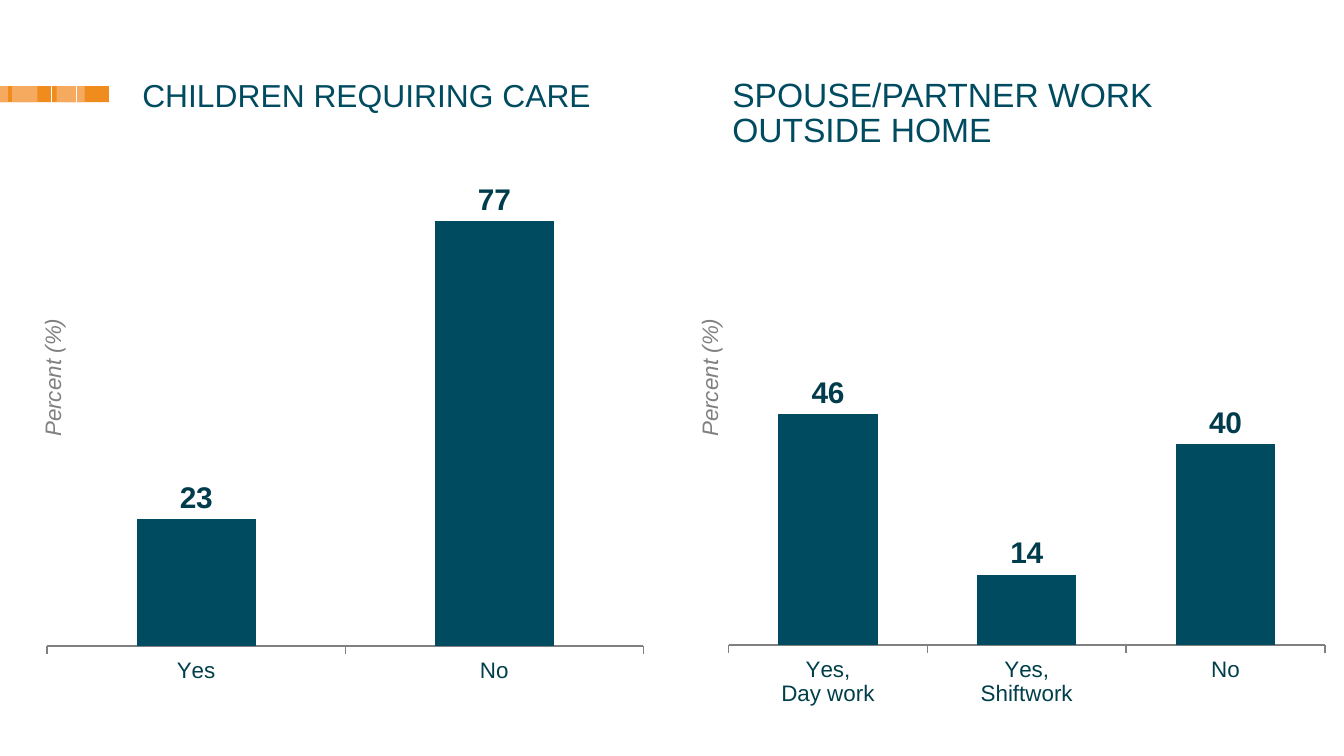
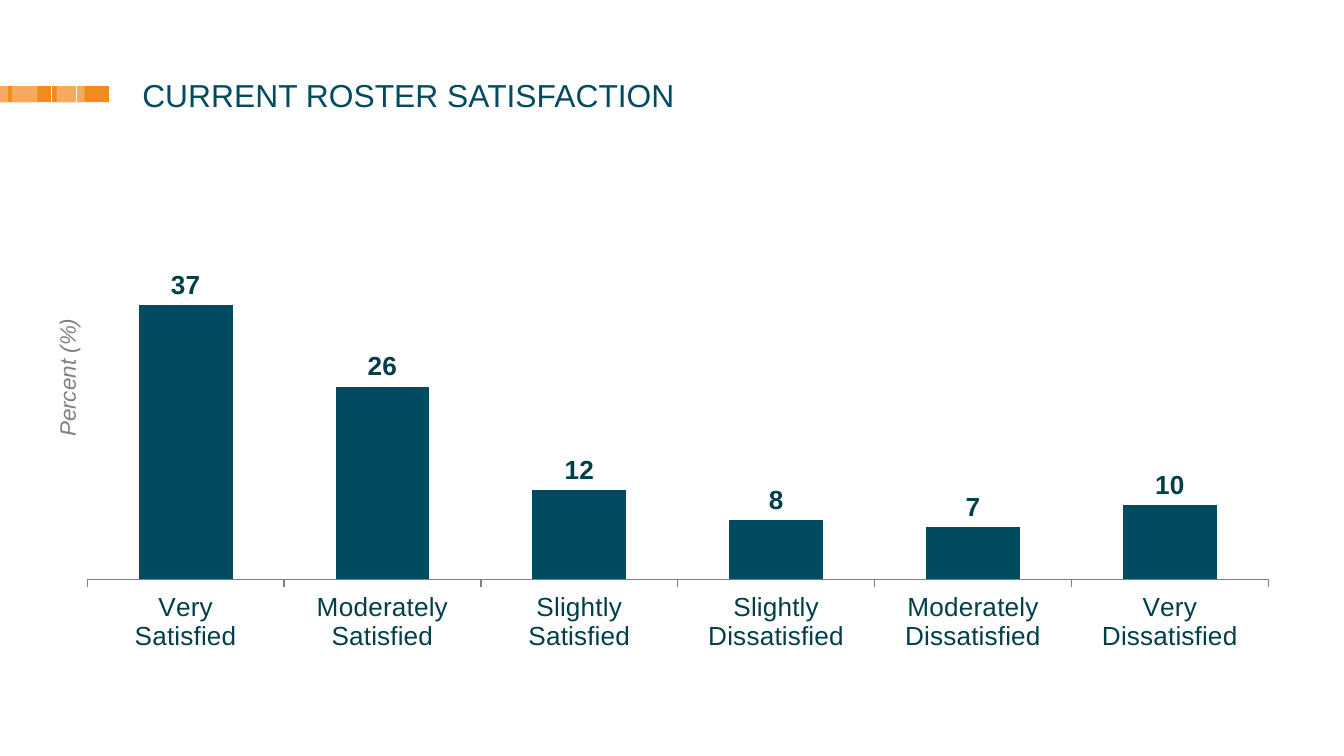
from dataclasses import dataclass

from lxml.etree import SubElement
from pptx import Presentation
from pptx.chart.data import CategoryChartData
from pptx.dml.color import RGBColor
from pptx.enum.chart import XL_CHART_TYPE as ChartType
from pptx.enum.chart import XL_LABEL_POSITION as LabelPos
from pptx.enum.chart import XL_TICK_MARK as Tick
from pptx.enum.shapes import MSO_CONNECTOR as Connector
from pptx.enum.shapes import MSO_SHAPE as Shape
from pptx.enum.text import PP_ALIGN as Align
from pptx.oxml import parse_xml
from pptx.oxml.ns import nsdecls, qn
from pptx.util import Cm, Pt


@dataclass(frozen=True)
class Theme:
    font: str = "Arial"
    teal: str = "004B60"
    label: str = "003C4C"
    chart_text: str = "003F4A"
    orange: str = "F08B1D"
    light_orange: str = "F6AA5F"
    white: str = "FFFFFF"
    gray: str = "808080"
    title_size: float = 17
    subtitle_size: float = 18
    note_size: float = 12


def rgb(value):
    return RGBColor.from_string(value)


class Deck:
    def __init__(self, theme):
        self.theme = theme
        self.prs = Presentation()
        self.prs.slide_width, self.prs.slide_height = Cm(25.4), Cm(14.29)
        self.s = None

    def slide(self, title):
        self.s = self.prs.slides.add_slide(self.prs.slide_layouts[6])
        self.band()
        self.text(title, 2.69, 1.55, 21.01, 1.27, self.theme.title_size, self.theme.teal)

    def band(self, top=1.63, height=0.3):
        t = self.theme
        self.rect(0, top, 2.06, height, t.orange)
        for left, width in ((1.07, 0.53), (0.23, 0.48), (0, 0.15)):
            self.rect(left, top, width, height, t.light_orange)
        for x in (0.97, 1.45):
            self.line(x, top, x, top + height, t.white, 0.63)

    def rect(self, left, top, width, height, color):
        sp = self.s.shapes.add_shape(Shape.RECTANGLE, Cm(left), Cm(top), Cm(width), Cm(height))
        sp.shadow.inherit = False
        sp.fill.solid()
        sp.fill.fore_color.rgb = rgb(color)
        sp.line.fill.background()

    def line(self, x1, y1, x2, y2, color, width):
        cn = self.s.shapes.add_connector(Connector.STRAIGHT, Cm(x1), Cm(y1), Cm(x2), Cm(y2))
        cn.line.color.rgb = rgb(color)
        cn.line.width = Pt(width)
        SubElement(cn.element.spPr, qn("a:effectLst"))

    def text(self, text, left, top, width, height, size, color):
        sp = self.s.shapes.add_textbox(Cm(left), Cm(top), Cm(width), Cm(height))
        tf = sp.text_frame
        tf.word_wrap = True
        tf.margin_left = tf.margin_right = tf.margin_top = tf.margin_bottom = 0
        p = tf.paragraphs[0]
        p.text = text
        p.line_spacing = 0.85
        p.space_after = Pt(12)
        p.font.name = self.theme.font
        p.font.size = Pt(size)
        p.font.color.rgb = rgb(color)
        return sp

    def subtitle(self, text, left, top):
        self.text(text, left, top, 11.2, 1.27, self.theme.subtitle_size, self.theme.teal)

    def axis_note(self, left):
        t = self.theme
        sp = self.text("Percent (%)", left, 5.69, 0.79, 2.9, t.note_size, t.gray)
        sp.element.find(".//" + qn("a:bodyPr")).set("vert", "vert270")
        p = sp.text_frame.paragraphs[0]
        p.alignment = Align.CENTER
        p.font.italic = True

    def columns(self, box, values, size, label_size, label_color, gap, top_value, step, plot_box, overlap=0):
        data = CategoryChartData(number_format="0")
        data.categories = list(values)
        data.add_series("Series 1", values.values())
        frame = self.s.shapes.add_chart(ChartType.COLUMN_CLUSTERED, *map(Cm, box), data)
        chart = frame.chart
        chart.has_legend = chart.has_title = False
        chart.font.name = self.theme.font
        chart.font.size = Pt(size)
        chart.font.color.rgb = rgb(self.theme.chart_text)

        value_axis = chart.value_axis
        value_axis.minimum_scale, value_axis.maximum_scale = 0, top_value
        value_axis.major_unit = step
        value_axis.has_major_gridlines = False
        value_axis.visible = False
        category_axis = chart.category_axis
        category_axis.major_tick_mark = Tick.OUTSIDE
        category_axis.format.line.color.rgb = rgb(self.theme.gray)
        category_axis.format.line.width = Pt(0.75)

        plot = chart.plots[0]
        plot.gap_width, plot.overlap = gap, overlap
        plot.vary_by_categories = False
        fill = plot.series[0].format.fill
        fill.solid()
        fill.fore_color.rgb = rgb(self.theme.teal)

        plot.has_data_labels = True
        labels = plot.data_labels
        labels.show_value = True
        labels.position = LabelPos.OUTSIDE_END
        labels.number_format, labels.number_format_is_linked = "0", False
        labels.font.name = self.theme.font
        labels.font.size = Pt(label_size)
        labels.font.bold = True
        labels.font.color.rgb = rgb(label_color)
        self.place_plot(chart, plot_box)

    def place_plot(self, chart, box):
        area = chart.element.find(".//" + qn("c:plotArea"))
        for old in area.findall(qn("c:layout")):
            area.remove(old)
        modes = "".join(f'<c:{k}Mode val="edge"/>' for k in "xy")
        sizes = "".join(f'<c:{k} val="{v}"/>' for k, v in zip("xywh", box))
        area.insert(0, parse_xml(
            f'<c:layout {nsdecls("c")}><c:manualLayout><c:layoutTarget val="inner"/>'
            f"{modes}{sizes}</c:manualLayout></c:layout>"
        ))


def main():
    theme = Theme()
    deck = Deck(theme)

    deck.slide("CHILDREN REQUIRING CARE")
    deck.subtitle("SPOUSE/PARTNER WORK\nOUTSIDE HOME", 13.84, 1.52)
    percent = dict(size=12, label_size=16, label_color=theme.label, top_value=100, step=50)
    deck.columns((0.53, 1.42, 11.99, 11.99), {"Yes": 23, "No": 77},
                 gap=150, plot_box=(0.03, 0.03, 0.94, 0.87), **percent)
    deck.columns((13.41, 2.36, 11.99, 11.99),
                 {"Yes,\nDay work": 46, "Yes,\nShiftwork": 14, "No": 40},
                 gap=100, plot_box=(0.03, 0.03, 0.94, 0.79), **percent)
    for left in (13.23, 0.81):
        deck.axis_note(left)

    deck.slide("CURRENT ROSTER SATISFACTION")
    satisfaction = {
        "Very\nSatisfied": 37,
        "Moderately\nSatisfied": 26,
        "Slightly\nSatisfied": 12,
        "Slightly\nDissatisfied": 8,
        "Moderately\nDissatisfied": 7,
        "Very\nDissatisfied": 10,
    }
    deck.columns((1.19, 0.66, 23.01, 12.4), satisfaction, size=14, label_size=14,
                 label_color=theme.chart_text, gap=110, top_value=70, step=30,
                 plot_box=(0.02, 0.04, 0.97, 0.79), overlap=-14)
    deck.axis_note(1.09)

    deck.prs.save("out.pptx")


if __name__ == "__main__":
    main()
